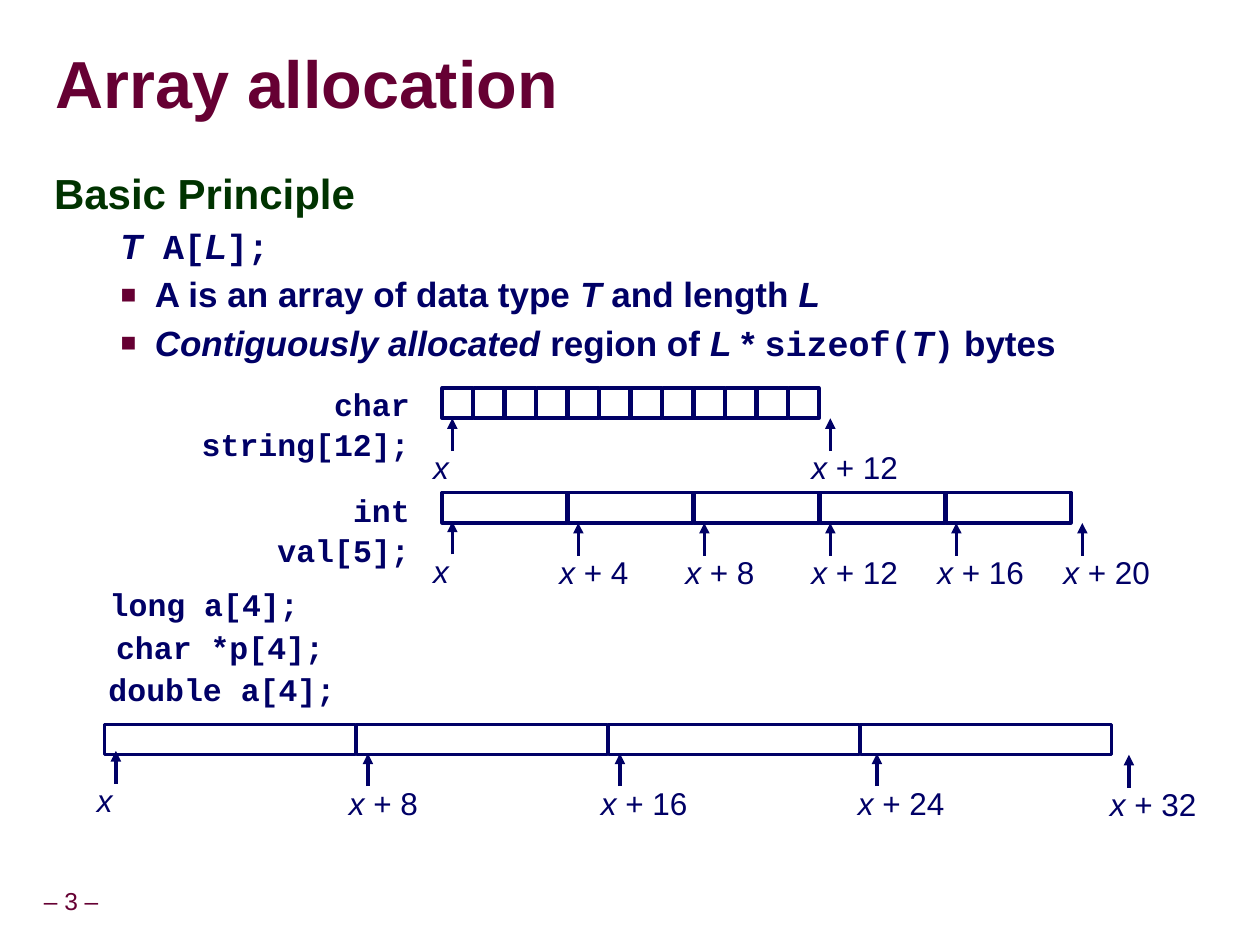
"""Build the slide on array allocation."""
from lxml import etree
from pptx import Presentation
from pptx.dml.color import RGBColor
from pptx.enum.shapes import MSO_CONNECTOR, MSO_SHAPE
from pptx.enum.text import MSO_ANCHOR, PP_ALIGN
from pptx.oxml.ns import qn
from pptx.util import Inches, Pt

NAVY = RGBColor(0x00, 0x00, 0x66)
WINE = RGBColor(0x66, 0x00, 0x33)
GREEN = RGBColor(0x00, 0x33, 0x00)
WHITE = RGBColor(0xFF, 0xFF, 0xFF)
RECT = MSO_SHAPE.RECTANGLE
LINE = MSO_CONNECTOR.STRAIGHT
LEFT, CENTER, RIGHT = PP_ALIGN.LEFT, PP_ALIGN.CENTER, PP_ALIGN.RIGHT
TOP, MIDDLE = MSO_ANCHOR.TOP, MSO_ANCHOR.MIDDLE
SANS, MONO = "Arial", "Courier New"
BYTE = 0.25

deck = Presentation()
deck.slide_width, deck.slide_height = Inches(10), Inches(7.5)
slide = deck.slides.add_slide(deck.slide_layouts[6])
shapes = slide.shapes


def add_box(left, top, width, height, wrap=True, anchor=TOP, pad=(0.1, 0.05)):
    frame = shapes.add_textbox(
        Inches(left), Inches(top), Inches(width), Inches(height)).text_frame
    frame.word_wrap, frame.vertical_anchor = wrap, anchor
    frame.margin_left = frame.margin_right = Inches(pad[0])
    frame.margin_top = frame.margin_bottom = Inches(pad[1])
    return frame


def write(para, runs, size=18, color=NAVY, bold=False, align=LEFT,
          line=1.0, before=0, margin=0, indent=0, bullet=None):
    """Fill a paragraph with (text, font, italic) runs."""
    para.alignment, para.line_spacing = align, line
    para.space_before = Pt(before)
    props = para._p.get_or_add_pPr()
    props.set("marL", str(Inches(margin)))
    props.set("indent", str(Inches(indent)))
    if bullet:
        tint = etree.SubElement(props, qn("a:buClr"))
        etree.SubElement(tint, qn("a:srgbClr")).set("val", str(WINE))
        etree.SubElement(props, qn("a:buSzPct")).set("val", "75000")
        etree.SubElement(props, qn("a:buFont")).set("typeface", SANS)
        etree.SubElement(props, qn("a:buChar")).set("char", bullet)
    else:
        etree.SubElement(props, qn("a:buNone"))
    for text, face, slant in runs:
        run = para.add_run()
        run.text = text
        font = run.font
        font.name, font.size, font.bold, font.italic = face, Pt(size), bold, slant
        font.color.rgb = color


title = add_box(0.44, 0.27, 9.53, 0.85, anchor=MIDDLE, pad=(0, 0))
write(title.paragraphs[0], [("Array allocation", SANS, False)],
      size=38, color=WINE, bold=True, line=0.87)

page = add_box(-0.09, 6.99, 1.31, 0.34, wrap=False, anchor=MIDDLE, pad=(0.05, 0.05))
write(page.paragraphs[0], [("– 3 –", SANS, False)],
      size=14, color=WINE, align=CENTER, line=0.9)

body = add_box(0.32, 1.34, 9.08, 1.65)
write(body.paragraphs[0], [("Basic Principle", SANS, False)], size=24,
      color=GREEN, bold=True, line=0.85, before=15, margin=0.42, indent=-0.41)
points = [
    (None, [("T", SANS, True), (" A[", MONO, False), ("L", SANS, True),
            ("];", MONO, False)]),
    ("■", [("A is an array of data type ", SANS, False), ("T", SANS, True),
           (" and length ", SANS, False), ("L", SANS, True)]),
    ("■", [("Contiguously allocated", SANS, True), (" region of ", SANS, False),
           ("L", SANS, True), (" * ", SANS, False), ("sizeof(", MONO, False),
           ("T", SANS, True), (")", MONO, False), (" bytes", SANS, False)]),
]
for mark, runs in points:
    write(body.add_paragraph(), runs, size=20, bold=True, line=0.9, before=6.2,
          margin=0.81, indent=-0.27, bullet=mark)

codes = [
    ("char string[12];", 1.05, 2.99, 2.3, True),
    ("int val[5];", 1.8, 3.83, 1.55, True),
    ("long a[4];", 0.76, 4.58, 1.71, False),
    ("char *p[4];", 0.82, 4.92, 1.85, False),
    ("double a[4];", 0.75, 5.25, 2.01, False),
]
for code, left, top, width, wrap in codes:
    frame = add_box(left, top, width, 0.4, wrap=wrap)
    write(frame.paragraphs[0], [(code, MONO, False)], bold=True, align=RIGHT, line=1.06)

# left, top, bytes per cell, cells, {byte offset: (arrow shift right, down)}
bars = [
    (3.51, 3.08, 1, 12, {0: (0, 0), 12: (0, 0)}),
    (3.51, 3.91, 4, 5, {0: (0, -0.01), **{n: (0, 0) for n in range(4, 21, 4)}}),
    (0.83, 5.75, 8, 4, {0: (0.01, -0.03), 8: (0.01, -0.01), 16: (0.01, -0.01),
                        24: (0.05, -0.01), 32: (0.05, 0)}),
]
for left, top, size, count, marks in bars:
    pitch = size * BYTE
    for n in range(count):
        cell = shapes.add_shape(RECT, Inches(left + n * pitch), Inches(top),
                                Inches(pitch - 0.01), Inches(0.24))
        cell.shadow.inherit = False
        cell.fill.solid()
        cell.fill.fore_color.rgb = WHITE
        cell.line.color.rgb, cell.line.width = NAVY, Pt(2)
    for step, (right, down) in marks.items():
        x, y = left + 0.08 + step * BYTE + right, top + down
        arrow = shapes.add_connector(LINE, Inches(x), Inches(y + 0.5),
                                     Inches(x), Inches(y + 0.24))
        arrow.line.color.rgb, arrow.line.width = NAVY, Pt(2)
        etree.SubElement(arrow.line._get_or_add_ln(), qn("a:tailEnd")).set("type", "triangle")
        etree.SubElement(arrow._element.spPr, qn("a:effectLst"))
        label = add_box(x - 0.25, y + 0.43, 1.08 if step else 0.43, 0.4)
        runs = [("x ", SANS, True), (f"+ {step}", SANS, False)] if step else [("x", SANS, True)]
        write(label.paragraphs[0], runs)

deck.save("out.pptx")
